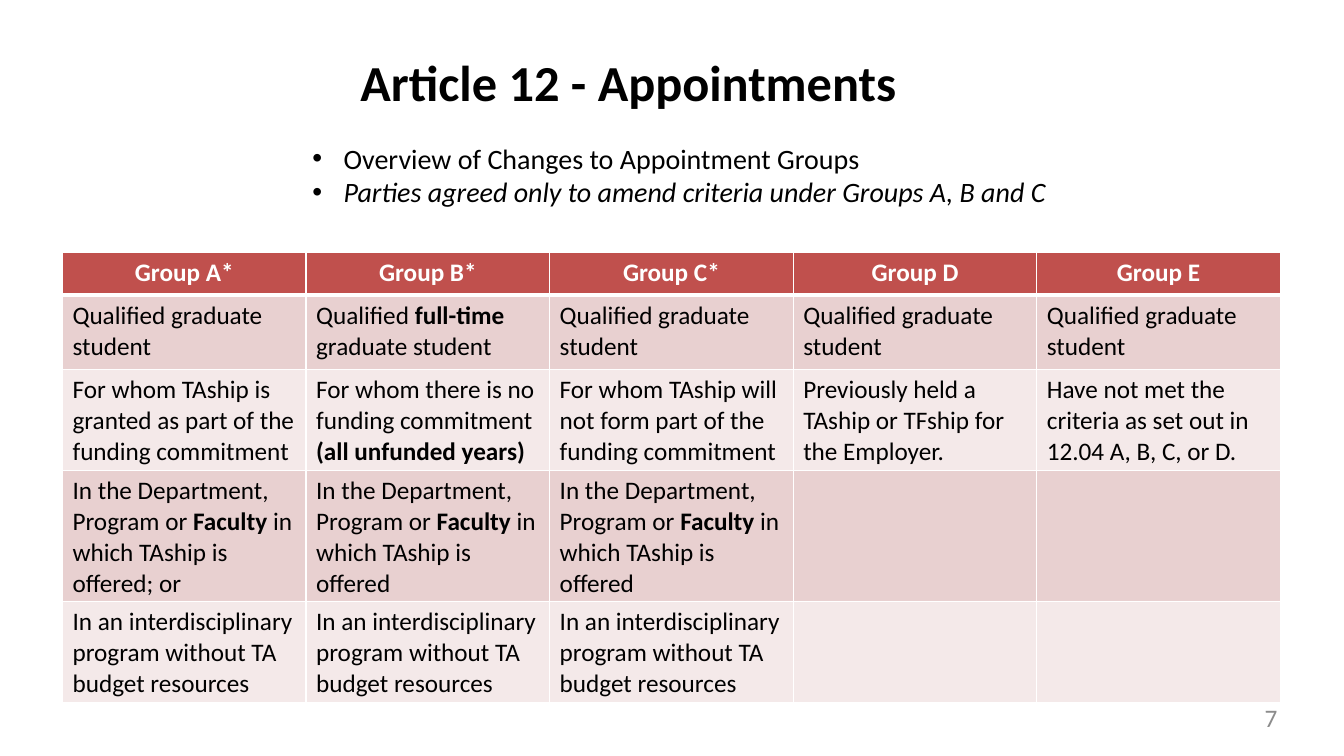
from lxml.etree import SubElement
from pptx import Presentation
from pptx.dml.color import RGBColor
from pptx.enum.text import MSO_AUTO_SIZE as AutoSize, MSO_ANCHOR as Anchor, PP_ALIGN as Align
from pptx.oxml.ns import qn
from pptx.util import Inches, Pt

COLORS = {
    "text": "000000", "white": "FFFFFF", "header": "C0504D",
    "odd_row": "E8D0D0", "even_row": "F4E9E9", "number": "8C8C8C",
}
FONT = "Calibri"
MARGIN = 0.62
TABLE_WIDTH = 12.08
ROW_HEIGHTS = [0.43, 0.74, 1.0, 1.3, 1.0]

QUALIFIED = "Qualified graduate student"
DEPARTMENT = "In the Department, Program or **Faculty** in which TAship is offered"
PROGRAM = "In an interdisciplinary program without TA budget resources"
GROUPS = [
    ["Group A*", "Group B*", "Group C*", "Group D", "Group E"],
    [QUALIFIED, "Qualified **full-time** graduate student"] + [QUALIFIED] * 3,
    [
        "For whom TAship is granted as part of the funding commitment",
        "For whom there is no funding commitment **(all unfunded years)**",
        "For whom TAship will not form part of the funding commitment",
        "Previously held a TAship or TFship for the Employer.",
        "Have not met the criteria as set out in 12.04 A, B, C, or D.",
    ],
    [DEPARTMENT + "; or", DEPARTMENT, DEPARTMENT, "", ""],
    [PROGRAM] * 3 + [""] * 2,
]
OVERVIEW = [
    ("Overview of Changes to Appointment Groups", False),
    ("Parties agreed only to amend criteria under Groups A, B and C", True),
]


def rgb(name):
    return RGBColor.from_string(COLORS[name])


def style(font, size, color="text", bold=False, italic=False):
    font.name = FONT
    font.size = Pt(size)
    font.bold = bold
    font.italic = italic
    font.color.rgb = rgb(color)


def add_title(slide, box, text):
    title = slide.shapes.title
    title.left, title.top, title.width, title.height = map(Inches, box)
    frame = title.text_frame
    frame.text = text
    frame.word_wrap = True
    frame.auto_size = AutoSize.NONE
    frame.vertical_anchor = Anchor.TOP
    paragraph = frame.paragraphs[0]
    paragraph.alignment = Align.CENTER
    style(paragraph.runs[0].font, 36, bold=True)


def add_overview(slide, box, bullets):
    frame = slide.shapes.add_textbox(*map(Inches, box)).text_frame
    frame.word_wrap = True
    for index, (text, italic) in enumerate(bullets):
        paragraph = frame.add_paragraph() if index else frame.paragraphs[0]
        paragraph.text = text
        properties = paragraph._p.get_or_add_pPr()
        properties.set("marL", str(Inches(0.31)))
        properties.set("indent", str(-Inches(0.31)))
        SubElement(properties, qn("a:buFont"), typeface="Arial")
        SubElement(properties, qn("a:buChar"), char="•")
        style(paragraph.runs[0].font, 20, italic=italic)


def set_borders(cell, top, bottom):
    properties = cell._tc.get_or_add_tcPr()
    for side, width in zip("LRTB", (1, 1, top, bottom)):
        line = SubElement(properties, qn(f"a:ln{side}"), w=str(Pt(width)))
        fill = SubElement(line, qn("a:solidFill"))
        SubElement(fill, qn("a:srgbClr"), val=COLORS["white"])


def fill_cell(cell, text, row):
    header = row == 0
    set_borders(cell, 3 if row == 1 else 1, 3 if header else 1)
    cell.fill.solid()
    cell.fill.fore_color.rgb = rgb("header" if header else "odd_row" if row % 2 else "even_row")
    paragraph = cell.text_frame.paragraphs[0]
    paragraph.alignment = Align.CENTER if header else Align.LEFT
    for index, part in enumerate(text.split("**")):
        if part:
            run = paragraph.add_run()
            run.text = part
            style(run.font, 18, "white" if header else "text", bold=header or index % 2 == 1)


def add_groups(slide, box, rows):
    table = slide.shapes.add_table(len(rows), len(rows[0]), *map(Inches, box)).table
    for column in table.columns:
        column.width = Inches(box[2] / len(rows[0]))
    for row, texts in enumerate(rows):
        table.rows[row].height = Inches(ROW_HEIGHTS[row])
        for column, text in enumerate(texts):
            fill_cell(table.cell(row, column), text, row)


def add_number(slide, box, text):
    frame = slide.shapes.add_textbox(*map(Inches, box)).text_frame
    frame.margin_left = frame.margin_right = frame.margin_top = frame.margin_bottom = 0
    frame.word_wrap = True
    frame.text = text
    paragraph = frame.paragraphs[0]
    paragraph.alignment = Align.RIGHT
    style(paragraph.runs[0].font, 18, "number")


def main():
    presentation = Presentation()
    presentation.slide_width = Inches(13.33)
    presentation.slide_height = Inches(7.5)
    slide = presentation.slides.add_slide(presentation.slide_layouts[5])
    add_number(slide, (9.6, 6.97, 3.07, 0.38), "7")
    add_title(slide, (MARGIN, 0.46, 11.23, 0.71), "Article 12 - Appointments")
    add_groups(slide, (MARGIN, 2.5, TABLE_WIDTH, sum(ROW_HEIGHTS)), GROUPS)
    add_overview(slide, (3, 1.35, 9.83, 0.77), OVERVIEW)
    presentation.save("out.pptx")


if __name__ == "__main__":
    main()
